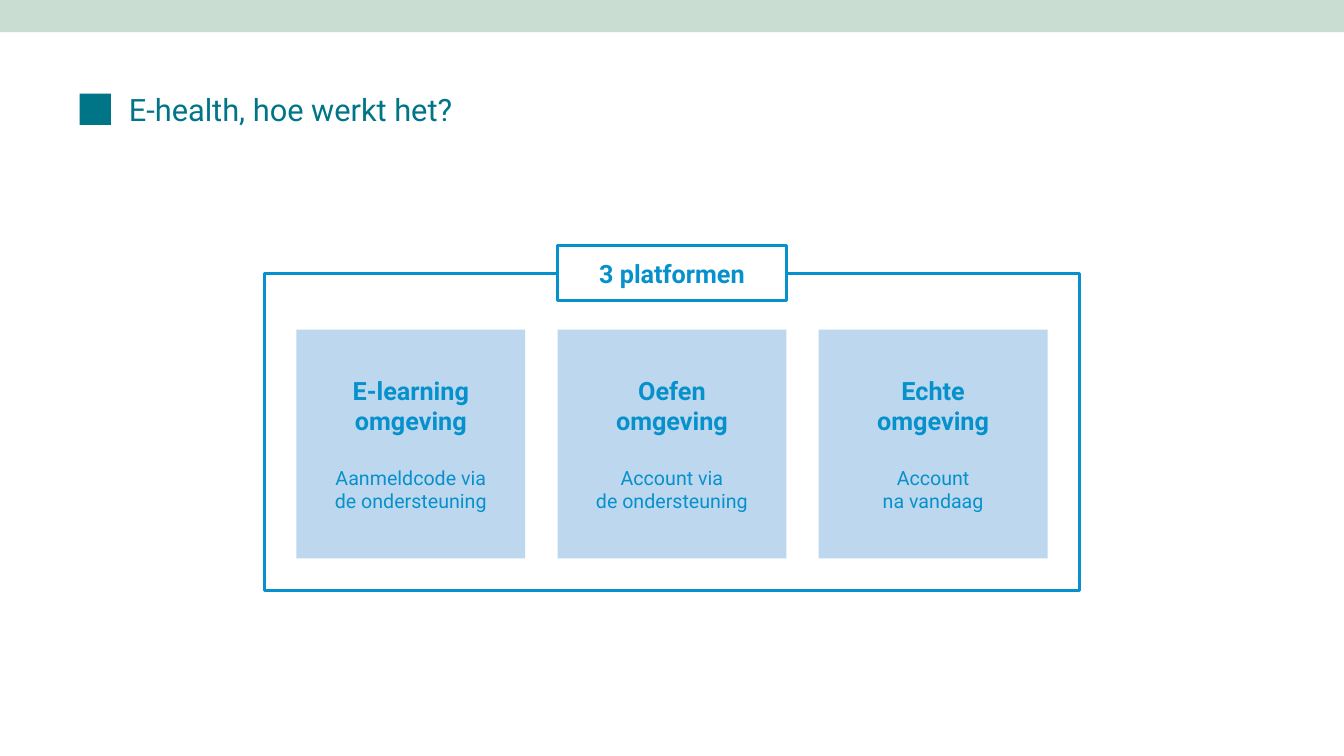
import pptx
import pptx.dml.color
import pptx.enum.shapes
import pptx.enum.text
import pptx.util

RGBColor = pptx.dml.color.RGBColor
Inches = pptx.util.Inches
Pt = pptx.util.Pt

BLUE = RGBColor(0x07, 0x91, 0xCC)
LIGHT_BLUE = RGBColor(0xBD, 0xD7, 0xEE)
TEAL = RGBColor(0x00, 0x75, 0x87)
MINT = RGBColor(0xCA, 0xDD, 0xD3)
WHITE = RGBColor(0xFF, 0xFF, 0xFF)

SLIDE_WIDTH, SLIDE_HEIGHT = 13.33, 7.5
GAP = 0.32
CARD_SIDE = 2.27
LABEL_HEIGHT = 0.55
HEADING_SIZE, DETAIL_SIZE = 18, 14

PLATFORMS = [
    (["E-learning omgeving"], ["Aanmeldcode via", "de ondersteuning"]),
    (["Oefen", "omgeving"], ["Account via", "de ondersteuning"]),
    (["Echte", "omgeving"], ["Account", "na vandaag"]),
]


def add_rectangle(slide, box, fill=None, line=None):
    shape = slide.shapes.add_shape(
        pptx.enum.shapes.MSO_SHAPE.RECTANGLE, *map(Inches, box))
    shape.shadow.inherit = False
    if fill is None:
        shape.fill.background()
    else:
        shape.fill.solid()
        shape.fill.fore_color.rgb = fill
    if line is None:
        shape.line.fill.background()
    else:
        shape.line.color.rgb = line
        shape.line.width = Pt(2)
    return shape


def add_run(paragraph, text, size, color, bold=False):
    run = paragraph.add_run()
    run.text = text
    run.font.name = "Roboto"
    run.font.size = Pt(size)
    run.font.bold = bold
    run.font.color.rgb = color


def write_centred(shape, headings, details=()):
    frame = shape.text_frame
    frame.word_wrap = True
    frame.vertical_anchor = pptx.enum.text.MSO_ANCHOR.MIDDLE
    lines = [(text, HEADING_SIZE, True) for text in headings]
    lines += [(text, DETAIL_SIZE, False) for text in details]
    for index, (text, size, bold) in enumerate(lines):
        paragraph = frame.add_paragraph() if index else frame.paragraphs[0]
        paragraph.alignment = pptx.enum.text.PP_ALIGN.CENTER
        if index == len(headings):
            paragraph.space_before = Pt(21)
        add_run(paragraph, text, size, BLUE, bold)


def add_title(slide, left, top, width, height):
    marker = 0.31
    add_rectangle(slide, (left, top + (height - marker) / 2, marker, marker), TEAL)
    indent = 0.39
    text_box = slide.shapes.add_textbox(
        *map(Inches, (left + indent, top, width - indent, height)))
    text_box.text_frame.word_wrap = False
    add_run(text_box.text_frame.paragraphs[0], "E-health, hoe werkt het?", 22, TEAL)


def add_platforms(slide, left, top, width, height):
    add_rectangle(slide, (left, top, width, height), line=BLUE)
    label = add_rectangle(
        slide,
        (left + (width - CARD_SIDE) / 2, top - LABEL_HEIGHT / 2, CARD_SIDE, LABEL_HEIGHT),
        WHITE, BLUE)
    write_centred(label, ["3 platformen"])
    card_top = top + height - GAP - CARD_SIDE
    for column, (headings, details) in enumerate(PLATFORMS):
        card_left = left + GAP + column * (CARD_SIDE + GAP)
        card = add_rectangle(slide, (card_left, card_top, CARD_SIDE, CARD_SIDE), LIGHT_BLUE)
        write_centred(card, headings, details)


def main():
    presentation = pptx.Presentation()
    presentation.slide_width = Inches(SLIDE_WIDTH)
    presentation.slide_height = Inches(SLIDE_HEIGHT)
    slide = presentation.slides.add_slide(presentation.slide_layouts[6])
    add_rectangle(slide, (0, 0, SLIDE_WIDTH, GAP), MINT)
    add_title(slide, 0.79, 0.85, 3.97, 0.47)
    frame_width = len(PLATFORMS) * (CARD_SIDE + GAP) + GAP
    add_platforms(slide, (SLIDE_WIDTH - frame_width) / 2, 2.71, frame_width, 3.15)
    presentation.save("out.pptx")


if __name__ == "__main__":
    main()
